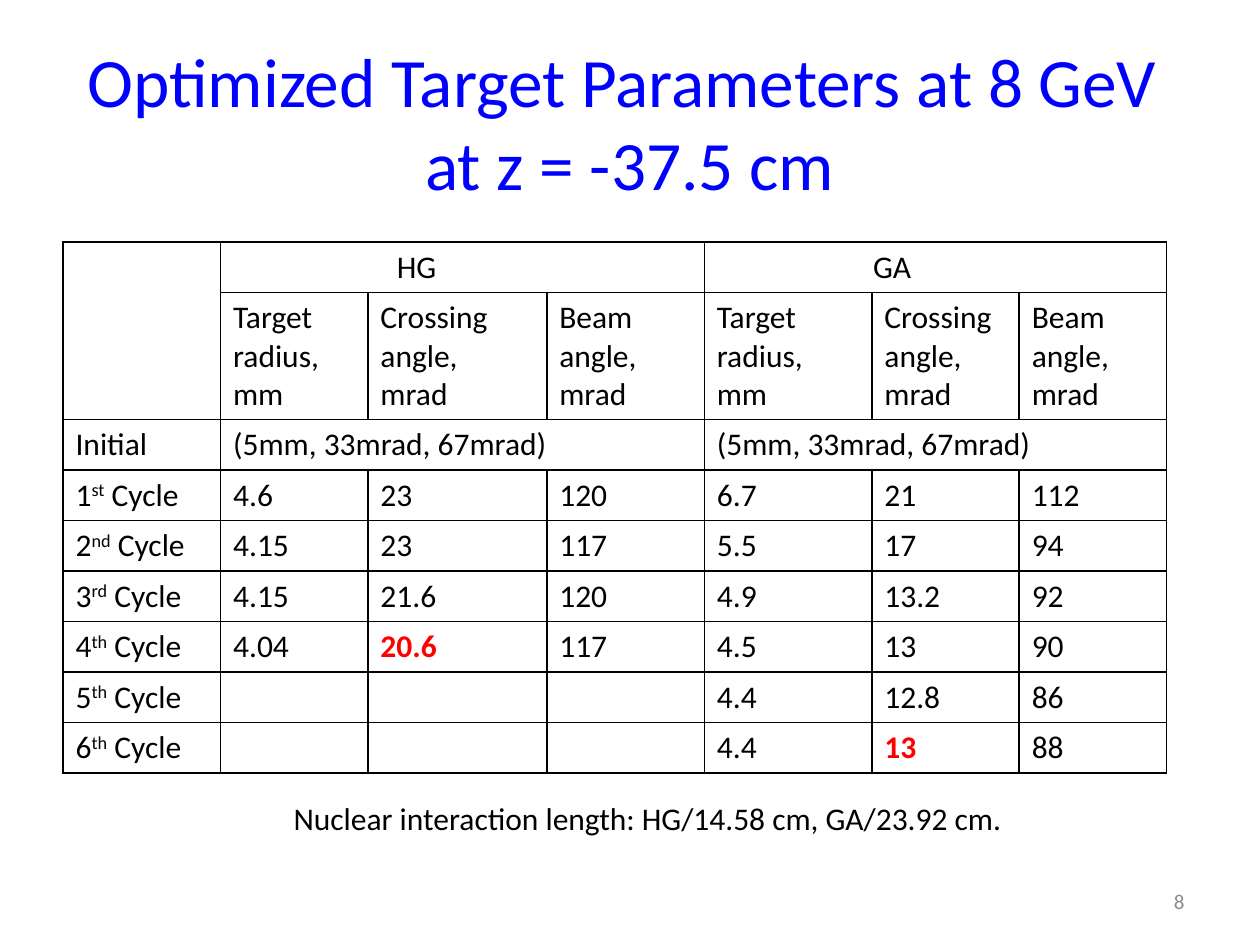
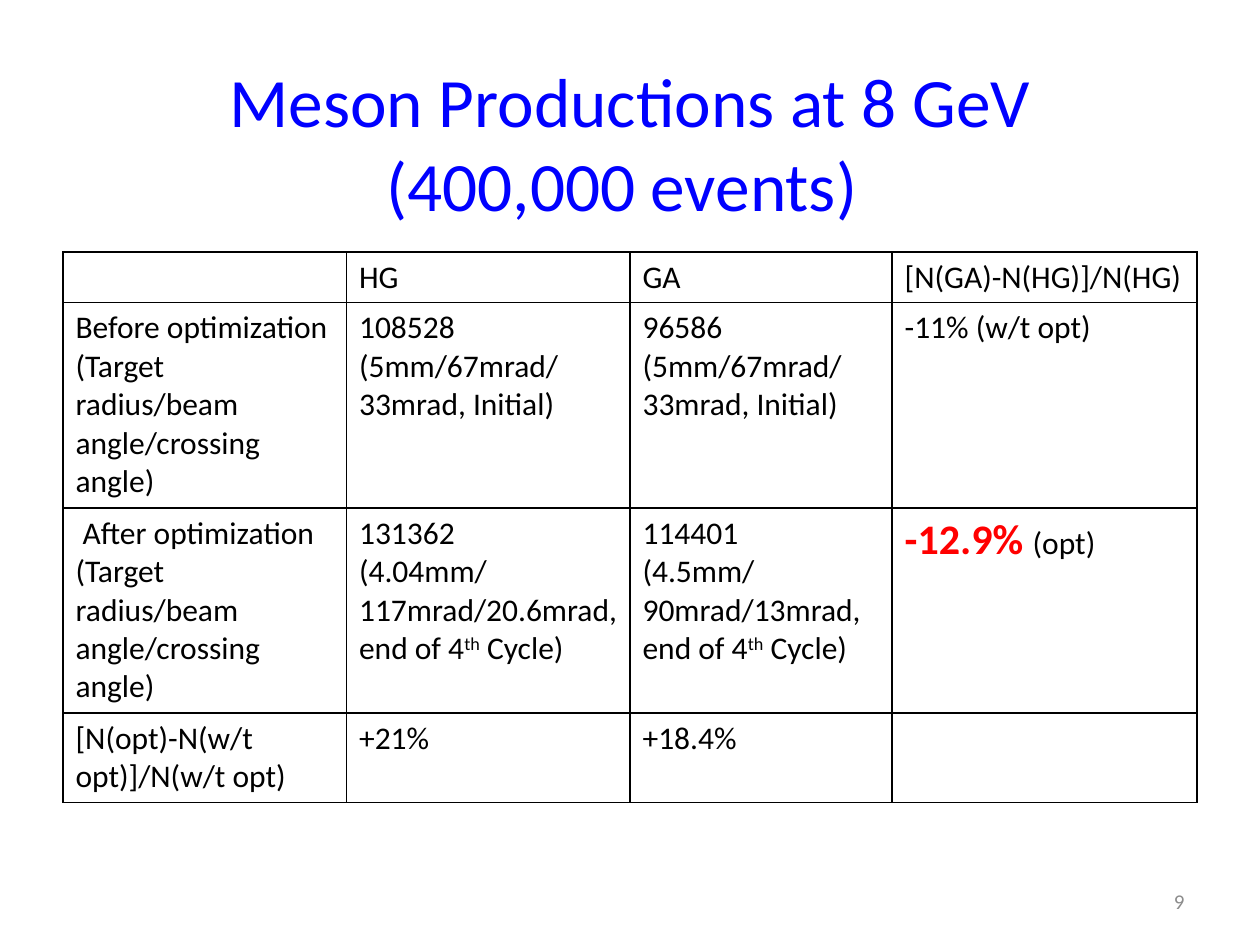
"""Build two slides on target optimization and meson production at 8 GeV."""
from typing import NamedTuple

from lxml import etree
from pptx import Presentation
from pptx.dml.color import RGBColor
from pptx.enum.text import MSO_ANCHOR, PP_ALIGN
from pptx.oxml.ns import qn
from pptx.util import Pt

LEFT, CENTER, RIGHT = PP_ALIGN.LEFT, PP_ALIGN.CENTER, PP_ALIGN.RIGHT
TOP, MIDDLE = MSO_ANCHOR.TOP, MSO_ANCHOR.MIDDLE
EMU_PER_PX = 9144
FONT = "Calibri"
BLACK, WHITE, BLUE, RED, GREY = "000000", "FFFFFF", "0000FF", "FF0000", "8C8C8C"
BODY_SIZE, TITLE_SIZE, NUMBER_SIZE = 18, 39.6, 12
BORDER_WIDTH = 1


class Span(NamedTuple):
    """A stretch of text with one look."""
    text: str
    size: float = BODY_SIZE
    color: str = BLACK
    bold: bool = False
    raised: bool = False


def px(length):
    """Turn pixels into EMU."""
    return length * EMU_PER_PX


def rgb(code):
    """Turn a hex string into a colour."""
    return RGBColor.from_string(code)


def ordinal(number, suffix, before="", after=" Cycle"):
    """Return the spans of an ordinal number with a raised suffix."""
    return [Span(before + number), Span(suffix, raised=True), Span(after)]


def key_value(text, size=BODY_SIZE):
    """Return a bold red span."""
    return Span(text, size, RED, True)


def add_span(para, part):
    """Add one run to a paragraph."""
    span = para.add_run()
    span.text = part.text
    span.font.name = FONT
    span.font.size = Pt(part.size)
    span.font.bold = part.bold
    span.font.color.rgb = rgb(part.color)
    if part.raised:
        span._r.get_or_add_rPr().set("baseline", "30000")


def fill_frame(frame, paragraphs, align=LEFT):
    """Write paragraphs, each a string or a list of spans."""
    for index, parts in enumerate(paragraphs):
        para = frame.add_paragraph() if index else frame.paragraphs[0]
        para.alignment = align
        for part in [Span(parts)] if isinstance(parts, str) else parts:
            add_span(para, part)


def add_text(page, place, paragraphs, align=LEFT, anchor=TOP):
    """Add a wrapping text box and return its frame."""
    frame = page.shapes.add_textbox(*map(px, place)).text_frame
    frame.word_wrap = True
    frame.vertical_anchor = anchor
    fill_frame(frame, paragraphs, align)
    return frame


def add_title(page, place, lines):
    """Add the blue title with a line break between its lines."""
    frame = add_text(page, place, [[]], CENTER, MIDDLE)
    para = frame.paragraphs[0]
    for index, line in enumerate(lines):
        if index:
            para.add_line_break()
        add_span(para, Span(line, TITLE_SIZE, BLUE))


def add_page_number(page, number):
    """Add the grey page number at the lower right."""
    add_text(page, (717, 695, 233, 40), [[Span(number, NUMBER_SIZE, GREY)]], RIGHT, MIDDLE)


def style_cell(cell):
    """Give a cell thin black borders and a white fill."""
    properties = cell._tc.get_or_add_tcPr()
    for side in ("lnL", "lnR", "lnT", "lnB"):
        line = etree.SubElement(properties, qn(f"a:{side}"), w=str(Pt(BORDER_WIDTH)))
        fill = etree.SubElement(line, qn("a:solidFill"))
        etree.SubElement(fill, qn("a:srgbClr"), val=BLACK)
    cell.fill.solid()
    cell.fill.fore_color.rgb = rgb(WHITE)


def add_grid(page, left, top, widths, heights, rows, merges=()):
    """Add a bordered table; each cell is a string or a list of paragraphs."""
    size = left, top, sum(widths), sum(heights)
    table = page.shapes.add_table(len(heights), len(widths), *map(px, size)).table
    table.first_row = table.horz_banding = False
    for column, width in zip(table.columns, widths):
        column.width = px(width)
    for row, height in zip(table.rows, heights):
        row.height = px(height)
    for r, row in enumerate(rows):
        for c, content in enumerate(row):
            cell = table.cell(r, c)
            style_cell(cell)
            if content:
                paragraphs = [content] if isinstance(content, str) else content
                fill_frame(cell.text_frame, paragraphs)
    for first, last in merges:
        table.cell(*first).merge(table.cell(*last))
    return table


def build_parameters(page):
    """Build the slide of target parameters."""
    add_title(page, (50, 0, 900, 192),
              ["Optimized Target Parameters at 8 GeV ", "at z = -37.5 cm"])
    headings = [["Target radius,", "mm"], ["Crossing angle,", "mrad"], ["Beam angle,", "mrad"]]
    start = "(5mm, 33mrad, 67mrad)"
    cycles = [
        ("1", "st", "4.6", "23", "120", "6.7", "21", "112"),
        ("2", "nd", "4.15", "23", "117", "5.5", "17", "94"),
        ("3", "rd", "4.15", "21.6", "120", "4.9", "13.2", "92"),
        ("4", "th", "4.04", [[key_value("20.6")]], "117", "4.5", "13", "90"),
        ("5", "th", "", "", "", "4.4", "12.8", "86"),
        ("6", "th", "", "", "", "4.4", [[key_value("13")]], "88"),
    ]
    rows = [
        ["", "HG", "", "", "GA", "", ""],
        ["", *headings, *headings],
        ["Initial", start, "", "", start, "", ""],
        *([[ordinal(number, suffix)], *values] for number, suffix, *values in cycles),
    ]
    merges = [((0, 0), (1, 0))]
    merges += [((r, c), (r, c + 2)) for r in (0, 2) for c in (1, 4)]
    table = add_grid(page, 50, 192, [125, 117, 142, 125, 133, 117, 117],
                     [40, 101] + [40] * 7, rows, merges)
    for column, indent in ((1, 140), (4, 134)):
        table.cell(0, column).margin_left = px(indent)
    add_page_number(page, "8")
    note = add_text(page, (150, 629, 775, 40),
                    ["Nuclear interaction length: HG/14.58 cm, GA/23.92 cm."])
    note.margin_left = px(83)


def build_productions(page):
    """Build the slide of meson productions."""
    add_title(page, (50, 50, 900, 125), ["Meson Productions at 8 GeV", "(400,000 events) "])
    measures = "(Target radius/beam angle/crossing angle)"
    start = "(5mm/67mrad/33mrad, Initial)"
    end = "mrad, end of 4"
    rows = [
        ["", "HG", "GA", "[N(GA)-N(HG)]/N(HG)"],
        [["Before optimization", measures], ["108528", start], ["96586", start],
         "-11% (w/t opt)"],
        [[" After optimization", measures],
         ["131362", ordinal(end, "th", "(4.04mm/117mrad/20.6", " Cycle)")],
         ["114401", ordinal(end, "th", "(4.5mm/90mrad/13", " Cycle)")],
         [[key_value("-12.9% ", 24), Span("(opt)")]]],
        ["[N(opt)-N(w/t opt)]/N(w/t opt)", "+21%", "+18.4%", ""],
    ]
    add_grid(page, 50, 200, [225, 225, 208, 242], [40, 163, 163, 71], rows)
    add_page_number(page, "9")


def main():
    """Build and save the deck."""
    deck = Presentation()
    deck.slide_width, deck.slide_height = px(1000), px(750)
    for build in (build_parameters, build_productions):
        build(deck.slides.add_slide(deck.slide_layouts[6]))
    deck.save("out.pptx")


if __name__ == "__main__":
    main()
